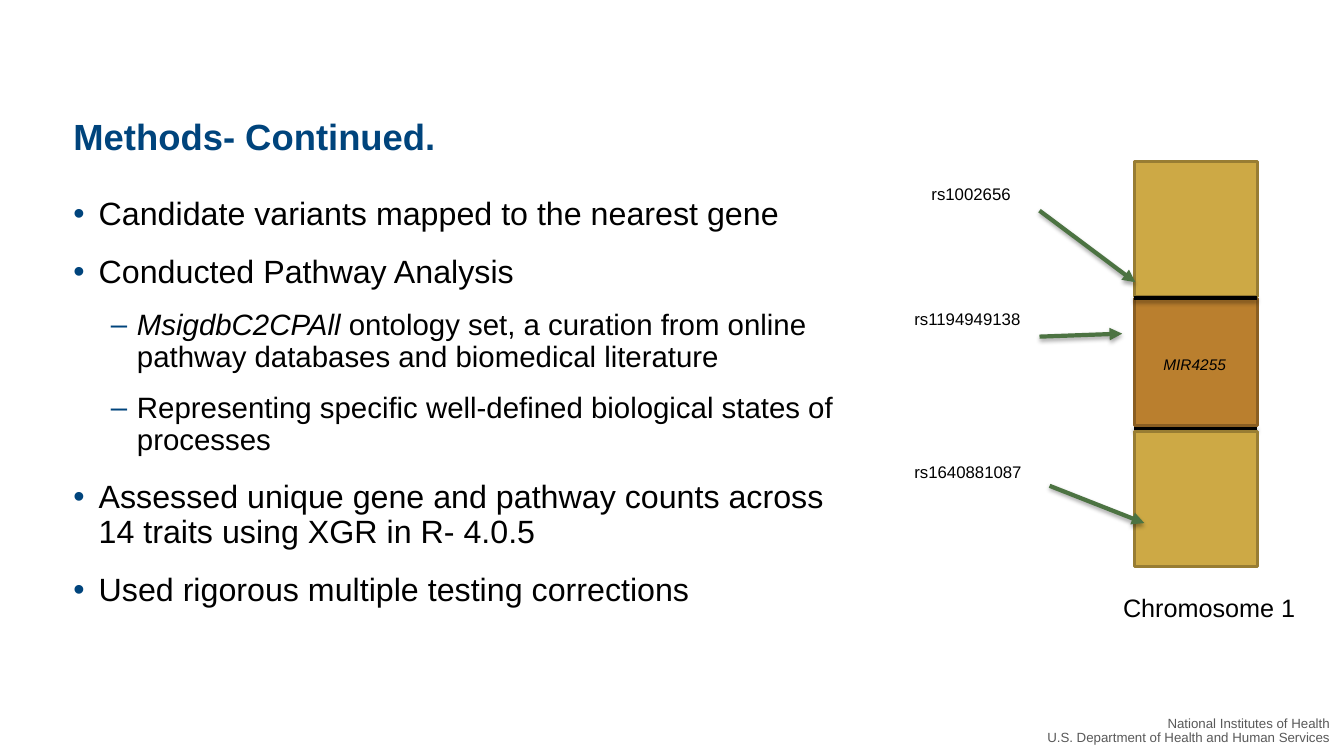
from lxml import etree
from pptx import Presentation
from pptx.dml.color import RGBColor
from pptx.enum.shapes import MSO_CONNECTOR, MSO_SHAPE
from pptx.enum.text import MSO_ANCHOR, PP_ALIGN
from pptx.oxml.ns import qn
from pptx.util import Inches, Pt

LEFT, RIGHT = PP_ALIGN.LEFT, PP_ALIGN.RIGHT
TOP, BOTTOM = MSO_ANCHOR.TOP, MSO_ANCHOR.BOTTOM
NAVY, BLACK, GRAY, GREEN = "00447C", "000000", "595959", "4C7342"
GOLD, GOLD_EDGE = "CDA945", "987D33"
COPPER, COPPER_EDGE = "BA7F2E", "8A5E22"

TITLE = "Methods- Continued."
AGENCY = ["National Institutes of Health",
          "U.S. Department of Health and Human Services"]
# level, runs of (text, italic)
BULLETS = [
    (0, [("Candidate variants mapped to the nearest gene", False)]),
    (0, [("Conducted Pathway Analysis", False)]),
    (1, [("MsigdbC2CPAll", True),
         (" ontology set, a curation from online pathway databases "
          "and biomedical literature", False)]),
    (1, [("Representing specific well-defined biological states of processes",
          False)]),
    (0, [("Assessed unique gene and pathway counts across 14 traits "
          "using XGR in R- 4.0.5", False)]),
    (0, [("Used rigorous multiple testing corrections", False)]),
]
# level: bullet, size, space before, left margin, hanging indent
LEVELS = {0: ("•", 23, 17, 0.25, 0.25), 1: ("–", 21, 14, 0.63, 0.26)}

BAND_LEFT, BAND_WIDTH = 11.25, 1.22
# top, height, fill, edge
BANDS = [(2.96, 1.26, COPPER, COPPER_EDGE),
         (1.6, 1.34, GOLD, GOLD_EDGE),
         (4.28, 1.34, GOLD, GOLD_EDGE)]
UPPER_BREAK, LOWER_BREAK = 2.96, 4.25
# label, label box, arrow start, arrow end
VARIANTS = [
    ("rs1002656", (9.14, 1.77, 1.53, 0.3), (10.31, 2.09), (11.26, 2.8)),
    ("rs1194949138", (8.97, 3.01, 1.35, 0.3), (10.31, 3.34), (11.13, 3.31)),
    ("rs1640881087", (8.97, 4.53, 1.52, 0.3), (10.41, 4.82), (11.35, 5.19)),
]


def rgb(color):
    return RGBColor.from_string(color)


def style_run(r, size, color, bold=False, italic=False):
    r.font.name = "Arial"
    r.font.size = Pt(size)
    r.font.bold = bold
    r.font.italic = italic
    r.font.color.rgb = rgb(color)


def add_frame(slide, box, anchor=TOP):
    tf = slide.shapes.add_textbox(*map(Inches, box)).text_frame
    tf.word_wrap = True
    tf.vertical_anchor = anchor
    return tf


def add_label(slide, text, box, size, color=BLACK, bold=False, italic=False):
    p = add_frame(slide, box).paragraphs[0]
    p.text = text
    style_run(p.runs[0], size, color, bold, italic)


def add_bullet(p, char):
    pPr = p._p.get_or_add_pPr()
    clr = etree.SubElement(pPr, qn("a:buClr"))
    etree.SubElement(clr, qn("a:srgbClr"), val=NAVY)
    etree.SubElement(pPr, qn("a:buFont"), typeface="Arial")
    etree.SubElement(pPr, qn("a:buChar"), char=char)
    return pPr


def add_line(slide, start, end, color, arrow=False):
    """Draw a 3 pt line with a soft shadow below it."""
    line = slide.shapes.add_connector(MSO_CONNECTOR.STRAIGHT,
                                      *map(Inches, start + end))
    line.line.width = Pt(3)
    line.line.color.rgb = rgb(color)
    if arrow:
        etree.SubElement(line.line._get_or_add_ln(), qn("a:tailEnd"),
                         type="triangle")
    effects = etree.SubElement(line._element.spPr, qn("a:effectLst"))
    shadow = etree.SubElement(effects, qn("a:outerShdw"),
                              blurRad=str(Pt(3.1)), dist=str(Pt(1.8)),
                              dir="5400000", rotWithShape="0")
    clr = etree.SubElement(shadow, qn("a:srgbClr"), val=BLACK)
    etree.SubElement(clr, qn("a:alpha"), val="35000")


def add_break(slide, y):
    add_line(slide, (BAND_LEFT, y), (BAND_LEFT + BAND_WIDTH, y), BLACK)


def add_agency(slide):
    tf = add_frame(slide, (10.26, 7.06, 3.08, 0.44), BOTTOM)
    tf.word_wrap = False
    tf.margin_right, tf.margin_bottom = Inches(0.15), Inches(0.1)
    tf.text = "\n".join(AGENCY)
    for p in tf.paragraphs:
        p.alignment = RIGHT
        p.line_spacing = 0.9
        style_run(p.runs[0], 9.5, GRAY)


def add_body(slide):
    tf = add_frame(slide, (0.63, 1.91, 8.02, 5.17))
    for i, (level, runs) in enumerate(BULLETS):
        char, size, before, margin, hang = LEVELS[level]
        p = tf.add_paragraph() if i else tf.paragraphs[0]
        pPr = add_bullet(p, char)
        pPr.set("marL", str(Inches(margin)))
        pPr.set("indent", str(-Inches(hang)))
        p.level = level
        p.alignment = LEFT
        p.line_spacing = 0.9
        p.space_before = Pt(before if i else 0)
        for text, italic in runs:
            r = p.add_run()
            r.text = text
            style_run(r, size, BLACK, italic=italic)


def add_chromosome(slide):
    add_break(slide, LOWER_BREAK)
    for top, height, fill, edge in BANDS:
        box = (BAND_LEFT, top, BAND_WIDTH, height)
        sp = slide.shapes.add_shape(MSO_SHAPE.RECTANGLE, *map(Inches, box))
        sp.shadow.inherit = False
        sp.fill.solid()
        sp.fill.fore_color.rgb = rgb(fill)
        sp.line.color.rgb = rgb(edge)
        sp.line.width = Pt(2)
    add_break(slide, UPPER_BREAK)
    add_label(slide, "MIR4255", (11.44, 3.47, 0.93, 0.29), 11, italic=True)
    add_label(slide, "Chromosome 1", (11.04, 5.83, 1.94, 0.4), 18)


def main():
    prs = Presentation()
    prs.slide_width, prs.slide_height = Inches(13.33), Inches(7.5)
    slide = prs.slides.add_slide(prs.slide_layouts[6])
    add_agency(slide)
    add_label(slide, TITLE, (0.63, 1.08, 12.04, 0.8), 26, NAVY, bold=True)
    add_body(slide)
    add_chromosome(slide)
    for name, box, start, end in VARIANTS:
        add_label(slide, name, box, 12)
        add_line(slide, start, end, GREEN, arrow=True)
    prs.save("out.pptx")


if __name__ == "__main__":
    main()
